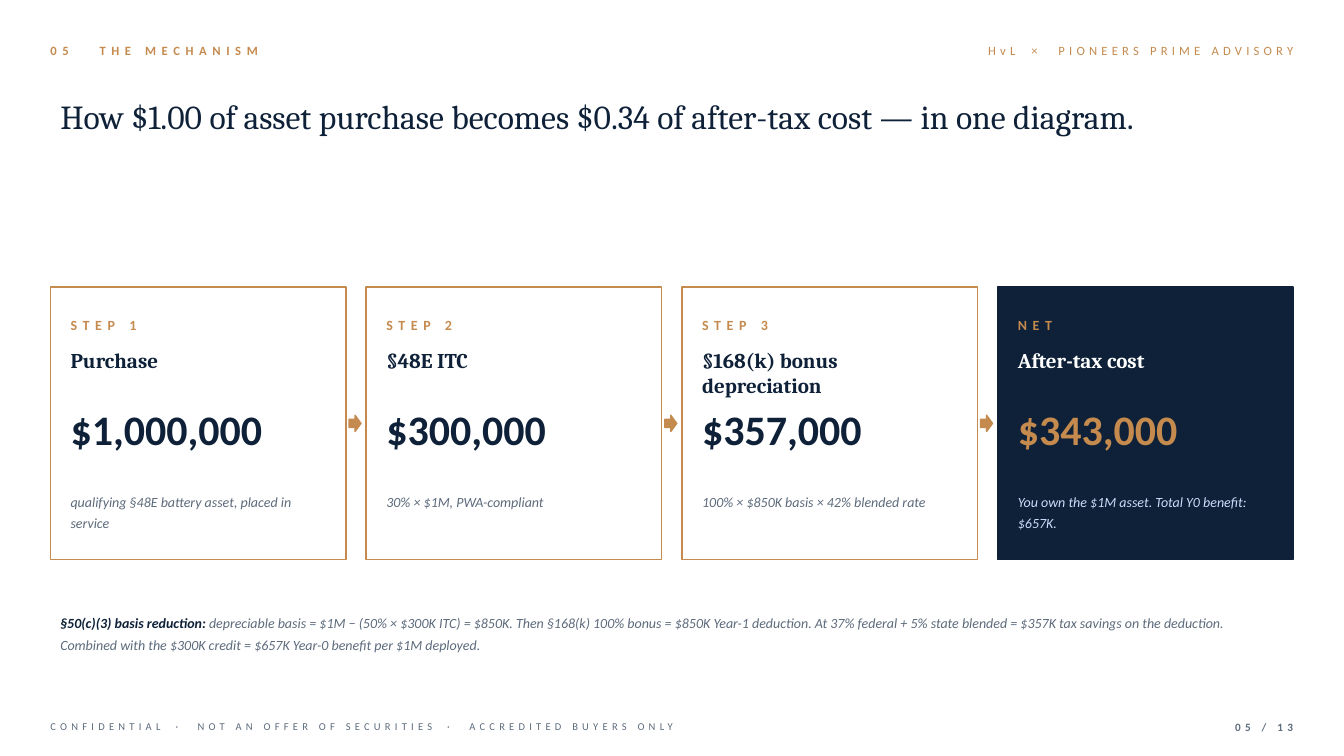
from pptx import Presentation
from pptx.dml.color import RGBColor
from pptx.enum.shapes import MSO_SHAPE as Preset
from pptx.enum.text import MSO_ANCHOR as Anchor, MSO_AUTO_SIZE as AutoSize, PP_ALIGN as Align
from pptx.util import Cm, Pt

NAVY, COPPER, SLATE, WHITE, ICE = "0E2138", "C58A4E", "5D6B7C", "FFFFFF", "CADCFC"
SANS, SERIF = "Calibri", "Cambria"
MARGIN, CONTENT_WIDTH = 1.27, 31.32
CARD_GAP = 0.51

CARDS = [
    ("STEP 1", "Purchase", "$1,000,000", "qualifying §48E battery asset, placed in service"),
    ("STEP 2", "§48E ITC", "$300,000", "30% × $1M, PWA-compliant"),
    ("STEP 3", "§168(k) bonus depreciation", "$357,000", "100% × $850K basis × 42% blended rate"),
    ("NET", "After-tax cost", "$343,000", "You own the $1M asset. Total Y0 benefit: $657K."),
]


def color(value):
    return RGBColor.from_string(value)


def add_span(para, text, size, ink, font=SANS, bold=False, italic=False, tracking=0):
    span = para.add_run()
    span.text = text
    span.font.name = font
    span.font.size = Pt(size)
    span.font.bold = bold
    span.font.italic = italic
    span.font.color.rgb = color(ink)
    if tracking:
        span._r.get_or_add_rPr().set("spc", str(round(tracking * 100)))


def prepare_frame(frame, anchor=Anchor.TOP, align=Align.LEFT):
    frame.margin_left = frame.margin_top = frame.margin_right = frame.margin_bottom = 0
    frame.word_wrap = True
    frame.auto_size = AutoSize.NONE
    frame.vertical_anchor = anchor
    para = frame.paragraphs[0]
    para.alignment = align
    return para


def add_text(slide, box, anchor=Anchor.TOP, align=Align.LEFT, leading=None):
    """Place an empty text box and return its paragraph."""
    shape = slide.shapes.add_textbox(*[Cm(length) for length in box])
    para = prepare_frame(shape.text_frame, anchor, align)
    if leading:
        para.line_spacing = leading
    return para


def add_tracked(para, parts, separator, size, ink, tracking, gap_tracking, bold=False):
    """Join letterspaced parts with a separator that is spaced wider."""
    for index, part in enumerate(parts):
        if index:
            add_span(para, separator, size, ink, bold=bold, tracking=gap_tracking)
        add_span(para, part, size, ink, bold=bold, tracking=tracking)


def add_preset(slide, preset, box, fill, line, weight):
    shape = slide.shapes.add_shape(preset, *[Cm(length) for length in box])
    shape.shadow.inherit = False
    shape.fill.solid()
    shape.fill.fore_color.rgb = color(fill)
    shape.line.color.rgb = color(line)
    shape.line.width = Pt(weight)


def add_header(slide, box):
    left, top, width, height = box
    para = add_text(slide, (left, top, 19.05, height), Anchor.MIDDLE)
    add_tracked(para, ["05", "THE MECHANISM"], " ", 9, COPPER, 4, 16, bold=True)
    para = add_text(slide, (left + width - 13.54, top, 13.54, height), Anchor.MIDDLE, Align.RIGHT)
    add_tracked(para, ["HvL", "PIONEERS PRIME ADVISORY"], " × ", 9, COPPER, 3, 6.4)


def add_title(slide, box):
    title = slide.shapes.title
    title.left, title.top, title.width, title.height = [Cm(length) for length in box]
    para = prepare_frame(title.text_frame)
    add_span(para, "How $1.00 of asset purchase becomes $0.34 of after-tax cost — in one diagram.",
             24, NAVY, SERIF)


def add_card(slide, box, content, is_net):
    left, top, width, height = box
    step, name, amount, detail = content
    fill, line = (NAVY, NAVY) if is_net else (WHITE, COPPER)
    name_ink, amount_ink, detail_ink = (WHITE, COPPER, ICE) if is_net else (NAVY, NAVY, SLATE)
    add_preset(slide, Preset.RECTANGLE, box, fill, line, 1.2)

    def row(offset, row_height, **layout):
        return add_text(slide, (left + 0.51, top + offset, width - 1.02, row_height), **layout)

    add_span(row(0.51, 0.89, anchor=Anchor.MIDDLE), step, 10, COPPER, bold=True, tracking=4)
    add_span(row(1.52, 1.27), name, 15, name_ink, SERIF, bold=True)
    add_span(row(2.92, 2.16), amount, 30, amount_ink, bold=True)
    add_span(row(5.08, 1.52, leading=1.25), detail, 10, detail_ink, italic=True)


def add_flow(slide, box):
    left, top, width, height = box
    card_width = (width - CARD_GAP * (len(CARDS) - 1)) / len(CARDS)
    arrow_width, arrow_height = 0.3, 0.41
    for index, content in enumerate(CARDS):
        card_left = left + index * (card_width + CARD_GAP)
        is_net = index == len(CARDS) - 1
        add_card(slide, (card_left, top, card_width, height), content, is_net)
        if not is_net:
            arrow_box = (card_left + card_width + 0.08, top + (height - arrow_height) / 2,
                         arrow_width, arrow_height)
            add_preset(slide, Preset.RIGHT_ARROW, arrow_box, COPPER, COPPER, 1)


def add_note(slide, box):
    para = add_text(slide, box, leading=1.3)
    add_span(para, "§50(c)(3) basis reduction: ", 10, NAVY, bold=True, italic=True)
    add_span(para, "depreciable basis = $1M − (50% × $300K ITC) = $850K. Then §168(k) 100% bonus = "
             "$850K Year-1 deduction. At 37% federal + 5% state blended = $357K tax savings on the "
             "deduction. Combined with the $300K credit = $657K Year-0 benefit per $1M deployed.",
             10, SLATE, italic=True)


def add_footer(slide, box):
    left, top, width, height = box
    para = add_text(slide, (left, top, 24.13, height), Anchor.MIDDLE)
    notices = ["CONFIDENTIAL", "NOT AN OFFER OF SECURITIES", "ACCREDITED BUYERS ONLY"]
    add_tracked(para, notices, " · ", 7.5, SLATE, 3, 6.1)
    para = add_text(slide, (left + width - 2.29, top, 2.29, height), Anchor.MIDDLE, Align.RIGHT)
    add_span(para, "05 / 13", 8, SLATE, bold=True, tracking=3)


def main():
    deck = Presentation()
    deck.slide_width, deck.slide_height = Cm(33.87), Cm(19.05)
    slide = deck.slides.add_slide(deck.slide_layouts[5])
    slide.background.fill.solid()
    slide.background.fill.fore_color.rgb = color(WHITE)

    # Header and title
    add_header(slide, (MARGIN, 0.89, CONTENT_WIDTH, 0.76))
    add_title(slide, (1.52, 2.41, 30.81, 3.05))
    # Step cards with arrows between them
    add_flow(slide, (MARGIN, 7.24, CONTENT_WIDTH, 6.86))
    # Explanation and footer
    add_note(slide, (1.52, 15.37, 30.81, 1.78))
    add_footer(slide, (MARGIN, 18.03, CONTENT_WIDTH, 0.56))
    deck.save("out.pptx")


if __name__ == "__main__":
    main()
